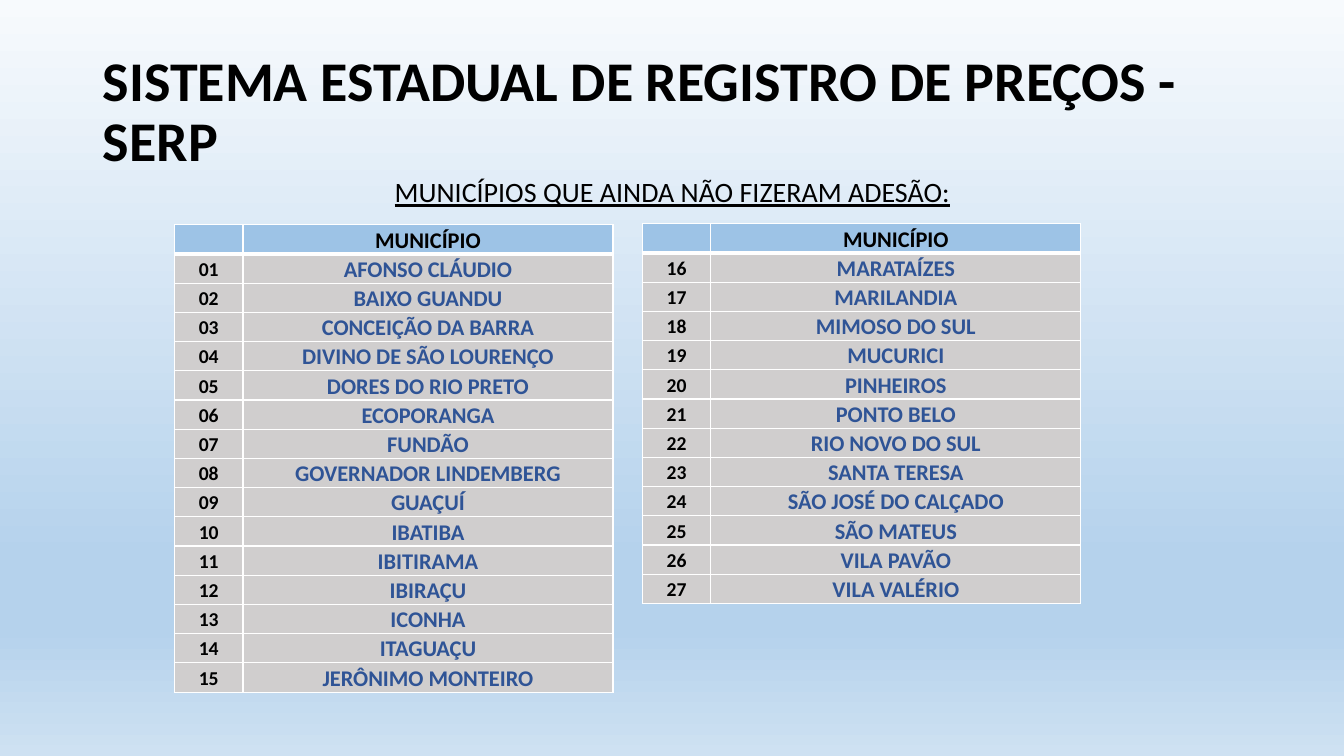
from lxml.etree import SubElement
from pptx import Presentation
from pptx.dml.color import RGBColor
from pptx.enum.text import MSO_ANCHOR, MSO_AUTO_SIZE, PP_ALIGN
from pptx.oxml.ns import qn
from pptx.util import Inches, Pt

FIRST_MUNICIPALITIES = [
    "AFONSO CLÁUDIO", "BAIXO GUANDU", "CONCEIÇÃO DA BARRA", "DIVINO DE SÃO LOURENÇO",
    "DORES DO RIO PRETO", "ECOPORANGA", "FUNDÃO", "GOVERNADOR LINDEMBERG", "GUAÇUÍ",
    "IBATIBA", "IBITIRAMA", "IBIRAÇU", "ICONHA", "ITAGUAÇU", "JERÔNIMO MONTEIRO",
]
LAST_MUNICIPALITIES = [
    "MARATAÍZES", "MARILANDIA", "MIMOSO DO SUL", "MUCURICI", "PINHEIROS", "PONTO BELO",
    "RIO NOVO DO SUL", "SANTA TERESA", "SÃO JOSÉ DO CALÇADO", "SÃO MATEUS",
    "VILA PAVÃO", "VILA VALÉRIO",
]
BACKGROUND_STOPS = [(0, "F7FAFD"), (74, "B5D2EC"), (83, "B5D2EC"), (100, "CEE1F2")]
COLUMN_WIDTHS = (0.68, 3.67)
ROW_HEIGHT = 0.29


def color(value):
    """Turn a hex string into a colour."""
    return RGBColor.from_string(value)


def add_span(para, text, size, ink="000000", bold=False, underline=False):
    """Add one formatted run to a paragraph."""
    span = para.add_run()
    span.text = text
    span.font.name = "Calibri"
    span.font.size = Pt(size)
    span.font.bold = bold
    span.font.underline = underline
    span.font.color.rgb = color(ink)


def paint_background(page):
    """Fill the page with the vertical blue gradient."""
    page.background.fill.gradient()
    stops = page.element.find(".//" + qn("a:gsLst"))
    for stop in list(stops):
        stops.remove(stop)
    for position, value in BACKGROUND_STOPS:
        stop = SubElement(stops, qn("a:gs"), pos=str(position * 1000))
        SubElement(stop, qn("a:srgbClr"), val=value)
    page.element.find(".//" + qn("a:lin")).set("ang", "5400000")


def place_title(page, left, top, width, height):
    """Move and write the page title."""
    title = page.shapes.title
    title.left, title.top = Inches(left), Inches(top)
    title.width, title.height = Inches(width), Inches(height)
    frame = title.text_frame
    frame.auto_size = MSO_AUTO_SIZE.NONE
    frame.vertical_anchor = MSO_ANCHOR.MIDDLE
    para = frame.paragraphs[0]
    para.alignment = PP_ALIGN.LEFT
    para.line_spacing = 0.9
    add_span(para, "SISTEMA ESTADUAL DE REGISTRO DE PREÇOS - SERP", 40, bold=True)


def add_subtitle(page, left, top, width, height):
    """Add the underlined line above the tables."""
    box = page.shapes.add_textbox(Inches(left), Inches(top), Inches(width), Inches(height))
    box.text_frame.word_wrap = True
    para = box.text_frame.paragraphs[0]
    para.alignment = PP_ALIGN.CENTER
    para.line_spacing = 0.9
    add_span(para, "MUNICÍPIOS QUE AINDA NÃO FIZERAM ADESÃO:", 20, underline=True)


def add_borders(cell, top, bottom):
    """Draw white borders with the given top and bottom widths in points."""
    properties = cell._tc.get_or_add_tcPr()
    for side, width in (("L", 1), ("R", 1), ("T", top), ("B", bottom)):
        line = SubElement(properties, qn("a:ln" + side), w=str(Pt(width)))
        fill = SubElement(line, qn("a:solidFill"))
        SubElement(fill, qn("a:srgbClr"), val="FFFFFF")


def fill_cell(cell, text, size, ink, row):
    """Format a table cell and write its text."""
    add_borders(cell, 3 if row == 1 else 1, 3 if row == 0 else 1)
    cell.fill.solid()
    cell.fill.fore_color.rgb = color("D0CECE" if row else "9DC3E6")
    cell.margin_left = cell.margin_right = Inches(0.07)
    cell.margin_top = cell.margin_bottom = 0
    cell.vertical_anchor = MSO_ANCHOR.MIDDLE if row else MSO_ANCHOR.TOP
    para = cell.text_frame.paragraphs[0]
    para.alignment = PP_ALIGN.CENTER
    para.line_spacing = 1.07
    if text:
        add_span(para, text, size, ink, bold=True)
    else:
        SubElement(para._p, qn("a:endParaRPr"), sz=str(size * 100))


def add_municipalities(page, left, top, names, first_number):
    """Add a numbered table of municipalities."""
    count = len(names) + 1
    table = page.shapes.add_table(
        count, 2, Inches(left), Inches(top),
        Inches(sum(COLUMN_WIDTHS)), Inches(ROW_HEIGHT * count),
    ).table
    table.horz_banding = False
    for column, width in zip(table.columns, COLUMN_WIDTHS):
        column.width = Inches(width)
    for row in table.rows:
        row.height = Inches(ROW_HEIGHT)
    fill_cell(table.cell(0, 0), "", 14, "000000", 0)
    fill_cell(table.cell(0, 1), "MUNICÍPIO", 16, "000000", 0)
    for row, name in enumerate(names, 1):
        number = f"{first_number + row - 1:02d}"
        fill_cell(table.cell(row, 0), number, 14, "000000", row)
        fill_cell(table.cell(row, 1), name, 16, "2F5496", row)


def main():
    """Build and save the deck."""
    deck = Presentation()
    deck.slide_width, deck.slide_height = Inches(13.33), Inches(7.5)
    page = deck.slides.add_slide(deck.slide_layouts[5])
    paint_background(page)
    place_title(page, 0.92, 0.4, 11.96, 1.45)
    add_subtitle(page, 0.92, 1.72, 11.5, 0.45)
    add_municipalities(page, 1.73, 2.23, FIRST_MUNICIPALITIES, 1)
    add_municipalities(page, 6.37, 2.22, LAST_MUNICIPALITIES, len(FIRST_MUNICIPALITIES) + 1)
    deck.save("out.pptx")


if __name__ == "__main__":
    main()
